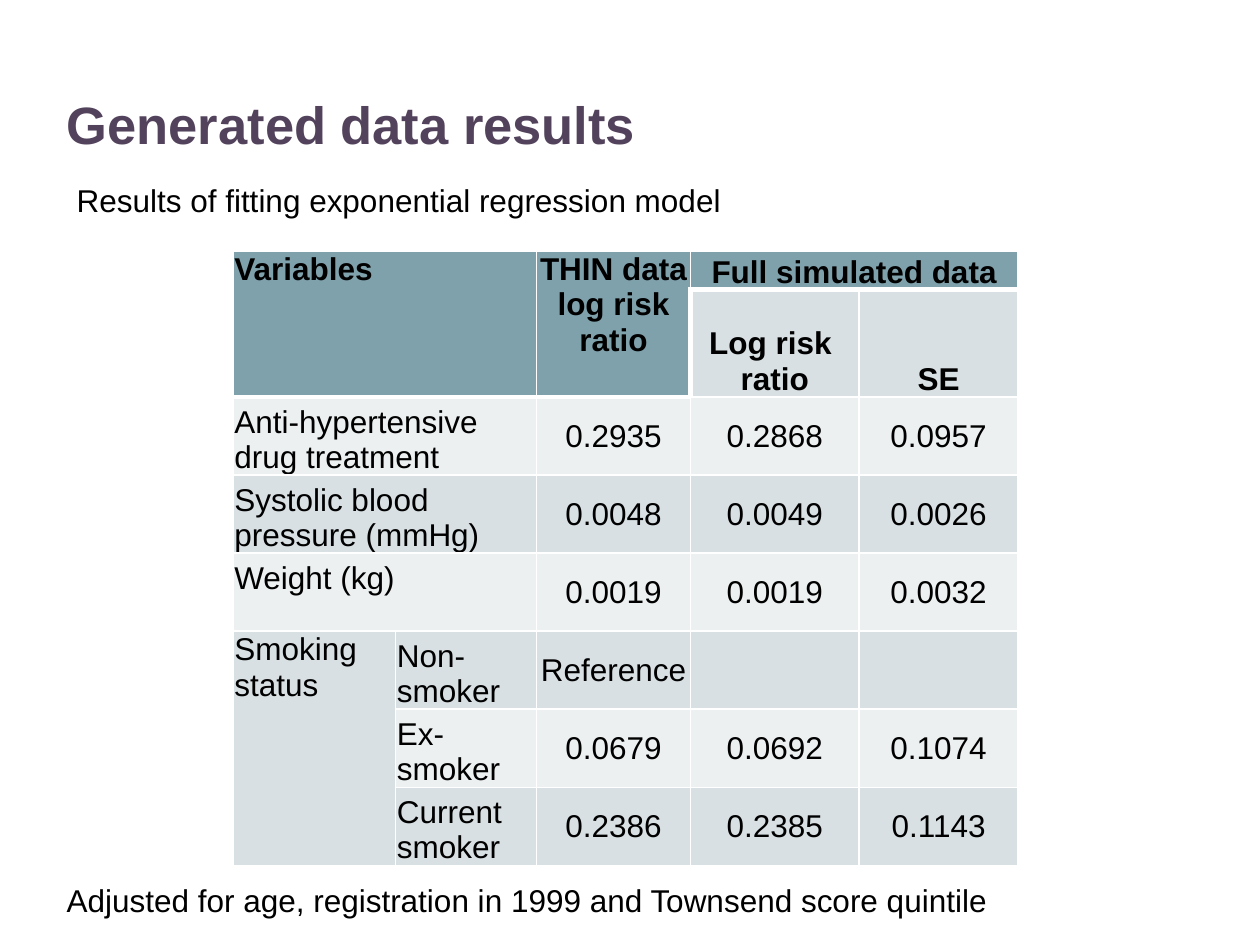
from lxml import etree
from pptx import Presentation
from pptx.dml.color import RGBColor
from pptx.enum.text import MSO_ANCHOR, MSO_AUTO_SIZE, PP_ALIGN
from pptx.oxml.ns import qn
from pptx.util import Inches, Pt

TOP, MIDDLE, BOTTOM = MSO_ANCHOR.TOP, MSO_ANCHOR.MIDDLE, MSO_ANCHOR.BOTTOM
LEFT, CENTER = PP_ALIGN.LEFT, PP_ALIGN.CENTER
GROW, FIXED = MSO_AUTO_SIZE.SHAPE_TO_FIT_TEXT, MSO_AUTO_SIZE.NONE

FONT = "Arial"
BLACK, WHITE, PLUM = "000000", "FFFFFF", "52425B"
HEADER, DARK_BAND, LIGHT_BAND = "7FA1AC", "D8E0E3", "ECF0F1"

COLUMN_WIDTHS = [1.29, 1.12, 1.22, 1.34, 1.26]
ROW_HEIGHTS = [0.31, 0.61] + [0.62] * 6
LINE_HEIGHT = 0.28

# First and last cell of each merged block, as (row, column)
MERGES = [((0, 0), (1, 1)), ((0, 2), (1, 2)), ((0, 3), (0, 4)),
          ((2, 0), (2, 1)), ((3, 0), (3, 1)), ((4, 0), (4, 1)),
          ((5, 0), (7, 0))]

ROWS = [
    ["Variables", "", "THIN data\nlog risk ratio", "Full simulated data", ""],
    ["", "", "", "Log risk \nratio", "SE"],
    ["Anti-hypertensive drug treatment", "", "0.2935", "0.2868", "0.0957"],
    ["Systolic blood pressure (mmHg)", "", "0.0048", "0.0049", "0.0026"],
    ["Weight (kg)", "", "0.0019", "0.0019", "0.0032"],
    ["Smoking status", "Non-smoker", "Reference", "", ""],
    ["", "Ex-smoker", "0.0679", "0.0692", "0.1074"],
    ["", "Current smoker", "0.2386", "0.2385", "0.1143"],
]


def color(value):
    return RGBColor.from_string(value)


def add_text(para, text, size=18, fill=BLACK, bold=False, align=LEFT):
    """Write the text run by run, with a line break between its lines."""
    para.alignment = align
    for index, line in enumerate(text.split("\n")):
        if index:
            para.add_line_break()
        span = para.add_run()
        span.text = line
        span.font.name = FONT
        span.font.size = Pt(size)
        span.font.bold = bold
        span.font.color.rgb = color(fill)


def add_title(page, text):
    title = page.shapes.title
    title.left, title.top = Inches(0.43), Inches(0.68)
    title.width, title.height = Inches(9.28), Inches(1.18)
    frame = title.text_frame
    frame.vertical_anchor = TOP
    frame.auto_size = FIXED
    add_text(frame.paragraphs[0], text, 30, PLUM, True)


def add_note(page, left, top, width, text):
    box = page.shapes.add_textbox(Inches(left), Inches(top),
                                  Inches(width), Inches(0.4))
    box.text_frame.word_wrap = True
    box.text_frame.auto_size = GROW
    add_text(box.text_frame.paragraphs[0], text)


def set_borders(cell, row, column):
    """Thin white rules, thicker below the header blocks."""
    header_side = column <= 2
    thick = {
        "L": (row, column) == (1, 3),
        "R": (row, column) == (1, 2),
        "T": row == (2 if header_side else 1),
        "B": row == 0 or (row == 1 and header_side),
    }
    properties = cell._tc.get_or_add_tcPr()
    for side, is_thick in thick.items():
        line = etree.SubElement(properties, qn("a:ln" + side),
                                w=str(Pt(3 if is_thick else 1)))
        solid = etree.SubElement(line, qn("a:solidFill"))
        etree.SubElement(solid, qn("a:srgbClr"), val=WHITE)


def cell_fill(row, column):
    if row == 0 or (row == 1 and column <= 2):
        return HEADER
    return LIGHT_BAND if row in (2, 4, 6) else DARK_BAND


def cell_anchor(row, column):
    if (row, column) in ((0, 0), (0, 2), (5, 0)):
        return TOP
    return BOTTOM if row < 2 or column < 2 else MIDDLE


def format_cell(cell, row, column, text):
    set_borders(cell, row, column)
    cell.fill.solid()
    cell.fill.fore_color.rgb = color(cell_fill(row, column))
    cell.margin_left = cell.margin_right = cell.margin_top = Inches(0.01)
    # The one-line label sits level with the first line of its neighbours
    cell.margin_bottom = Inches(LINE_HEIGHT if text == "Weight (kg)" else 0)
    cell.vertical_anchor = cell_anchor(row, column)
    if text:
        add_text(cell.text_frame.paragraphs[0], text, bold=row < 2,
                 align=CENTER if column >= 2 else LEFT)


def add_results_table(page):
    frame = page.shapes.add_table(len(ROWS), len(COLUMN_WIDTHS),
                                  Inches(1.85), Inches(1.99),
                                  Inches(sum(COLUMN_WIDTHS)),
                                  Inches(sum(ROW_HEIGHTS)))
    table = frame.table
    for column, width in zip(table.columns, COLUMN_WIDTHS):
        column.width = Inches(width)
    for row, height in zip(table.rows, ROW_HEIGHTS):
        row.height = Inches(height)
    for first, last in MERGES:
        table.cell(*first).merge(table.cell(*last))
    for row, texts in enumerate(ROWS):
        for column, text in enumerate(texts):
            format_cell(table.cell(row, column), row, column, text)


def main():
    deck = Presentation()
    deck.slide_width, deck.slide_height = Inches(10), Inches(7.5)
    page = deck.slides.add_slide(deck.slide_layouts[5])

    # Heading, table, then the lines around it
    add_title(page, "Generated data results")
    add_results_table(page)
    add_note(page, 0.43, 6.94, 7.95,
             "Adjusted for age, registration in 1999 and Townsend score quintile")
    add_note(page, 0.51, 1.39, 7.87,
             "Results of fitting exponential regression model")

    deck.save("out.pptx")


if __name__ == "__main__":
    main()
